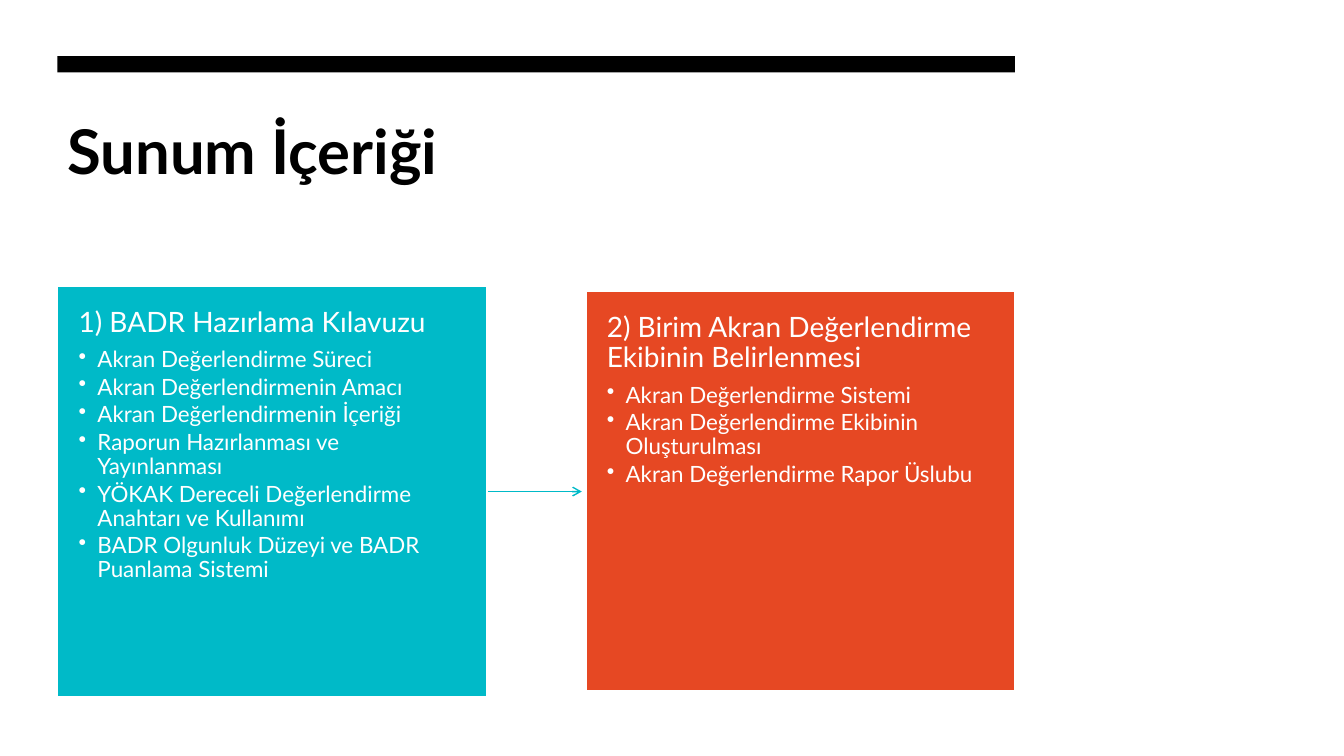
from lxml import etree
from pptx import Presentation
from pptx.dml.color import RGBColor
from pptx.enum.shapes import MSO_CONNECTOR, MSO_SHAPE
from pptx.enum.text import MSO_ANCHOR, PP_ALIGN
from pptx.oxml.ns import qn
from pptx.util import Pt

RECTANGLE = MSO_SHAPE.RECTANGLE
STRAIGHT = MSO_CONNECTOR.STRAIGHT
TOP = MSO_ANCHOR.TOP
LEFT = PP_ALIGN.LEFT

COLOURS = {"black": "000000", "white": "FFFFFF", "teal": "00BAC8", "orange": "E64823"}
MARGIN = 41.04
CONTENT_WIDTH = 684
CARD_WIDTH = 306.7
CARD_MIDDLE = 351.1

CARDS = [
    ("teal", 293.2, "1) BADR Hazırlama Kılavuzu", [
        "Akran Değerlendirme Süreci",
        "Akran Değerlendirmenin Amacı",
        "Akran Değerlendirmenin İçeriği",
        "Raporun Hazırlanması ve Yayınlanması",
        "YÖKAK Dereceli Değerlendirme Anahtarı ve Kullanımı",
        "BADR Olgunluk Düzeyi ve BADR Puanlama Sistemi",
    ]),
    ("orange", 285.8, "2) Birim Akran Değerlendirme Ekibinin Belirlenmesi", [
        "Akran Değerlendirme Sistemi",
        "Akran Değerlendirme Ekibinin Oluşturulması",
        "Akran Değerlendirme Rapor Üslubu",
    ]),
]


def colour(name):
    return RGBColor.from_string(COLOURS[name])


def write(paragraph, text, size, color, font="Lato", bold=False,
          line_spacing=1.0, space_after=0, bullet_indent=0):
    paragraph.alignment = LEFT
    paragraph.line_spacing = line_spacing
    paragraph.space_after = Pt(space_after)
    run = paragraph.add_run()
    run.text = text
    run.font.name = font
    run.font.size = Pt(size)
    run.font.bold = bold
    run.font.color.rgb = colour(color)
    if bullet_indent:
        paragraph.level = 1
        properties = paragraph._p.get_or_add_pPr()
        properties.set("marL", str(Pt(bullet_indent)))
        properties.set("indent", str(-Pt(bullet_indent)))
        etree.SubElement(properties, qn("a:buChar"), char="•")


class SlideBuilder:
    def __init__(self, slide):
        self.slide = slide

    def frame(self, shape, horizontal, vertical):
        frame = shape.text_frame
        frame.word_wrap = True
        frame.vertical_anchor = TOP
        frame.margin_left = frame.margin_right = Pt(horizontal)
        frame.margin_top = frame.margin_bottom = Pt(vertical)
        return frame

    def title(self, text, left, top, width, height):
        shape = self.slide.shapes.add_textbox(Pt(left), Pt(top), Pt(width), Pt(height))
        frame = self.frame(shape, 7.2, 3.6)
        write(frame.paragraphs[0], text, 44, "black", bold=True)

    def rectangle(self, left, top, width, height, fill, line=None):
        shape = self.slide.shapes.add_shape(
            RECTANGLE, Pt(left), Pt(top), Pt(width), Pt(height))
        shape.shadow.inherit = False
        shape.fill.solid()
        shape.fill.fore_color.rgb = colour(fill)
        if line:
            shape.line.color.rgb = colour(line)
            shape.line.width = Pt(1.5)
        else:
            shape.line.fill.background()
        return shape

    def card(self, left, height, fill, heading, items):
        shape = self.rectangle(
            left, CARD_MIDDLE - height / 2, CARD_WIDTH, height, fill, line="white")
        frame = self.frame(shape, 15.1, 15.8)
        write(frame.paragraphs[0], heading, 20, "white", line_spacing=0.9, space_after=7)
        for item in items:
            write(frame.add_paragraph(), item, 16, "white",
                  line_spacing=0.9, space_after=2.4, bullet_indent=13.5)

    def arrow(self, start, end, y, color):
        connector = self.slide.shapes.add_connector(
            STRAIGHT, Pt(start), Pt(y), Pt(end), Pt(y))
        connector.line.color.rgb = colour(color)
        connector.line.width = Pt(1)
        etree.SubElement(connector.line._get_or_add_ln(), qn("a:tailEnd"), type="arrow")
        etree.SubElement(connector._element.spPr, qn("a:effectLst"))


def main():
    presentation = Presentation()
    presentation.slide_width = Pt(960)
    presentation.slide_height = Pt(540)
    builder = SlideBuilder(presentation.slides.add_slide(presentation.slide_layouts[6]))

    builder.title("Sunum İçeriği", MARGIN, 77, CONTENT_WIDTH, 115.2)
    builder.rectangle(MARGIN, 40.2, CONTENT_WIDTH, 11.5, "black")
    builder.arrow(347.8, 415.6, CARD_MIDDLE, "teal")
    step = CONTENT_WIDTH - CARD_WIDTH
    for index, (fill, height, heading, items) in enumerate(CARDS):
        builder.card(MARGIN + index * step, height, fill, heading, items)

    presentation.save("out.pptx")


if __name__ == "__main__":
    main()
